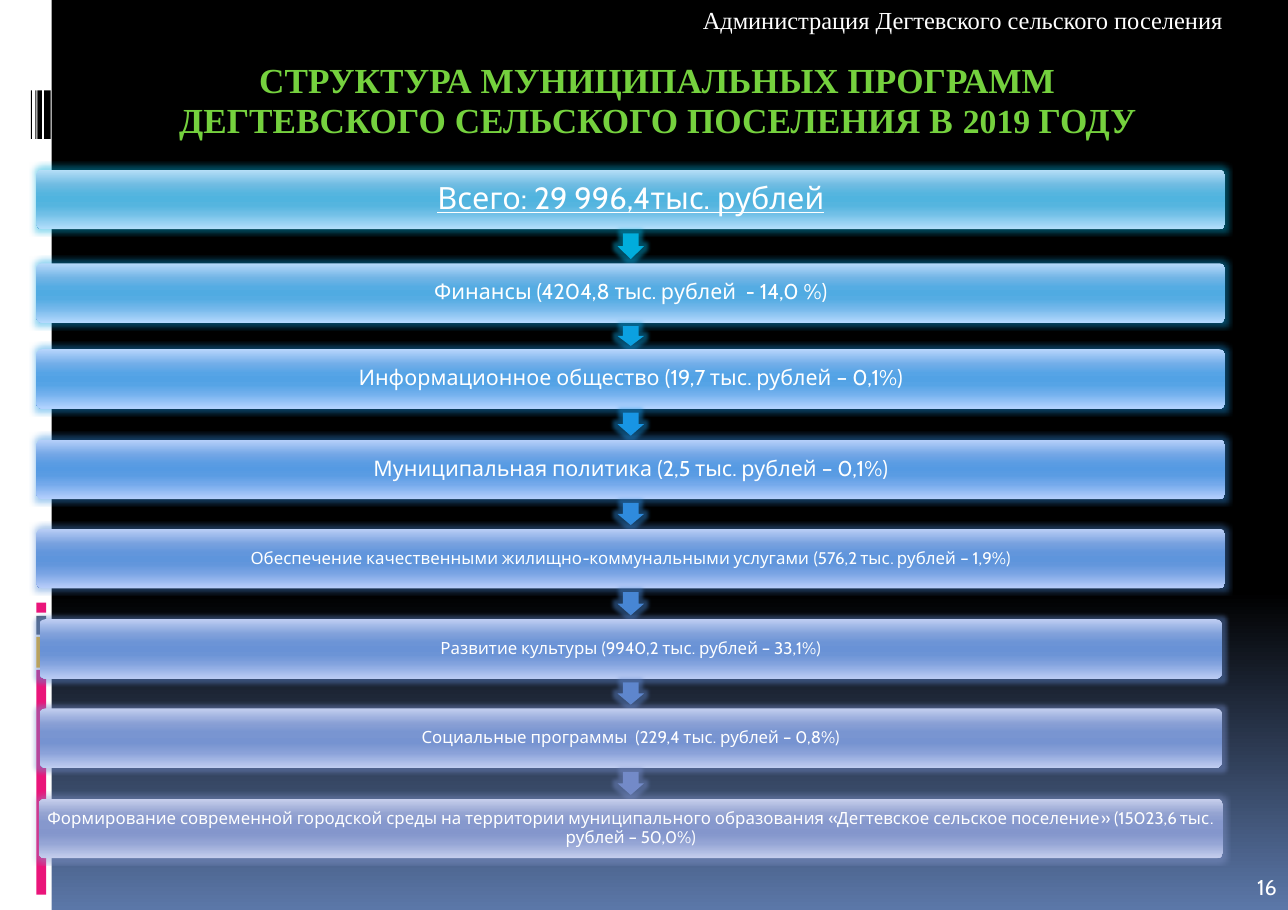
"""Builds the slide on the structure of municipal programmes in 2019."""
import pptx
import pptx.dml.color
import pptx.enum.shapes
import pptx.enum.text
import pptx.oxml
import pptx.oxml.ns
import pptx.util
from lxml import etree

SHAPES = pptx.enum.shapes.MSO_SHAPE
ALIGN = pptx.enum.text.PP_ALIGN
ANCHOR = pptx.enum.text.MSO_ANCHOR
qn = pptx.oxml.ns.qn


def colour(hex_code):
    return pptx.dml.color.RGBColor.from_string(hex_code)


def paint_gradient(fill, element, stops):
    fill.gradient()
    fill.gradient_angle = 270
    stop_list = element.find(".//" + qn("a:gsLst"))
    for stop in list(stop_list):
        stop_list.remove(stop)
    for share, hex_code in stops:
        stop = etree.SubElement(stop_list, qn("a:gs"), pos=str(share * 1000))
        etree.SubElement(stop, qn("a:srgbClr"), val=hex_code)


COLUMNS, ROWS = 1169, 826
unit = pptx.util.Inches(0.01)
deck = pptx.Presentation()
deck.slide_width, deck.slide_height = COLUMNS * unit, ROWS * unit
slide = deck.slides.add_slide(deck.slide_layouts[5])
paint_gradient(slide.background.fill, slide.background._cSld,
               [(0, "000000"), (65, "000000"), (100, "5B77A8")])

margin_parts = [
    (0, 0, 47, ROWS, "FFFFFF"),
    (33, 608, 9, 204, "EA157A"),
    (33, 578, 9, 28, "FEB80A"),
    (33, 559, 9, 17, "4E5B6F"),
    (33, 547, 9, 9, "EA157A"),
] + [(left, 82, width, 44, "000000") for left, width in [(40, 6), (34, 4), (32, 1), (28, 1)]]
for *box, hex_code in margin_parts:
    part = slide.shapes.add_shape(SHAPES.RECTANGLE, *(n * unit for n in box))
    part.shadow.inherit = False
    part.fill.solid()
    part.fill.fore_color.rgb = colour(hex_code)
    part.line.fill.background()

heading = slide.shapes.title
heading.left, heading.top, heading.width, heading.height = (n * unit for n in (151, 55, 892, 73))
frame = heading.text_frame
frame.word_wrap = True
frame.auto_size = pptx.enum.text.MSO_AUTO_SIZE.NONE
frame.vertical_anchor = ANCHOR.TOP
frame.margin_left = frame.margin_right = frame.margin_top = frame.margin_bottom = 0
paragraph = frame.paragraphs[0]
paragraph.alignment = ALIGN.CENTER
paragraph.line_spacing = pptx.util.Pt(26)
for words, size in [
    ("СТРУКТУРА МУНИЦИПАЛЬНЫХ ПРОГРАММ ДЕГТЕВСКОГО СЕЛЬСКОГО ПОСЕЛЕНИЯ В ", 23),
    ("2019 ", 22),
    ("ГОДУ", 23),
]:
    run = paragraph.add_run()
    run.text = words
    run.font.name = "Times New Roman"
    run.font.size = pptx.util.Pt(size)
    run.font.bold = True
    run.font.color.rgb = colour("75D13E")

captions = [
    ("Администрация Дегтевского сельского поселения", (628, 0, 542, 37),
     "Times New Roman", 16, ALIGN.LEFT, ANCHOR.TOP, 10),
    ("16", (1101, 773, 58, 44), "Cabin", 14, ALIGN.RIGHT, ANCHOR.BOTTOM, 0),
]
for words, box, font, size, alignment, anchor, inset in captions:
    frame = slide.shapes.add_textbox(*(n * unit for n in box)).text_frame
    frame.word_wrap = True
    frame.vertical_anchor = anchor
    frame.margin_left = frame.margin_right = inset * unit
    frame.margin_top = frame.margin_bottom = inset * unit // 2
    paragraph = frame.paragraphs[0]
    paragraph.text = words
    paragraph.alignment = alignment
    paragraph.font.name = font
    paragraph.font.size = pptx.util.Pt(size)
    paragraph.font.color.rgb = colour("FFFFFF")

programmes = [
    ("Всего: 29 996,4тыс. рублей", 154, 1079, 20, "00ADDC",
     "B7DFF8 70BCE2 55B5DF 50B4DF 55B5DF 72C0E7 B4DFFB"),
    ("Финансы (4204,8 тыс. рублей  - 14,0 %)", 239, 1079, 14, "0BA1E1",
     "B7D9FA 70B4E5 55ACE3 50ABE2 55ACE3 72B7EA B4D9FD"),
    ("Информационное общество (19,7 тыс. рублей – 0,1%)", 317, 1079, 14, "1895E4",
     "B7D5FC 71ADE8 56A4E6 52A2E5 56A4E6 72B0ED B4D4FF"),
    ("Муниципальная политика (2,5 тыс. рублей – 0,1%)", 399, 1079, 14, "2F8BDD",
     "B8D1FA 73A6E6 5A9CE3 559AE3 5A9CE3 74A9EB B5D0FD"),
    ("Обеспечение качественными жилищно-коммунальными услугами (576,2 тыс. рублей – 1,9%)",
     480, 1079, 11, "4786D4", "BACEF6 78A1DF 6296DC 5E95DC 6296DC 7AA4E4 B8CDF9"),
    ("Развитие культуры (9940,2 тыс. рублей – 33,1%)", 562, 1073, 11, "5E86CD",
     "BECDF2 80A0DA 6C94D6 6992D6 6C94D6 82A2DE BBCCF4"),
    ("Социальные программы  (229,4 тыс. рублей – 0,8%)", 643, 1073, 11, "738AC8",
     "C2CEEF 8AA0D5 7995D1 7693D1 7995D1 8BA2D9 C0CDF1"),
    ("Формирование современной городской среды на территории муниципального образования "
     "«Дегтевское сельское поселение» (15023,6 тыс. рублей – 50,0%)",
     725, 1075, 11, "8496CC", "C7CFEC 94A3D1 8698CD 8496CC 8698CD 95A5D5 C5CEED"),
]
STOP_SHARES = (0, 25, 40, 50, 60, 75, 100)
CENTRE, BAR_HEIGHT, ARROW_WIDTH = 572.5, 54, 24
INSETS = {20: 8, 14: 6, 11: 5}

for index, (words, top, width, size, accent, shades) in enumerate(programmes):
    bar = slide.shapes.add_shape(SHAPES.ROUNDED_RECTANGLE, round((CENTRE - width / 2) * unit),
                                 top * unit, width * unit, BAR_HEIGHT * unit)
    bar.adjustments[0] = 0.1
    paint_gradient(bar.fill, bar._element, zip(STOP_SHARES, shades.split()))
    frame = bar.text_frame
    frame.word_wrap = True
    frame.vertical_anchor = ANCHOR.MIDDLE
    inset = INSETS[size] * unit
    frame.margin_left = frame.margin_right = frame.margin_top = frame.margin_bottom = inset
    paragraph = frame.paragraphs[0]
    paragraph.text = words
    paragraph.alignment = ALIGN.CENTER
    paragraph.line_spacing = 0.9
    font = paragraph.runs[0].font
    font.name = "Cabin"
    font.size = pptx.util.Pt(size)
    font.underline = index == 0
    font.color.rgb = colour("FFFFFF")
    glowing = [bar]

    if index + 1 < len(programmes):
        bottom = top + BAR_HEIGHT
        gap = programmes[index + 1][1] - bottom
        arrow = slide.shapes.add_shape(
            SHAPES.DOWN_ARROW, round((CENTRE - ARROW_WIDTH / 2) * unit),
            round((bottom + gap / 8) * unit), ARROW_WIDTH * unit, round(gap * 0.75 * unit))
        arrow.adjustments[0] = 0.6
        arrow.adjustments[1] = 0.5
        arrow.fill.solid()
        arrow.fill.fore_color.rgb = colour(accent)
        glowing.append(arrow)

    for shape in glowing:
        shape.line.fill.background()
        shape.shadow.inherit = False
        effects = shape._element.spPr.find(qn("a:effectLst"))
        glow = etree.SubElement(effects, qn("a:glow"), rad="63500")
        tint = etree.SubElement(glow, qn("a:srgbClr"), val=accent)
        etree.SubElement(tint, qn("a:alpha"), val="45000")

deck.save("out.pptx")
